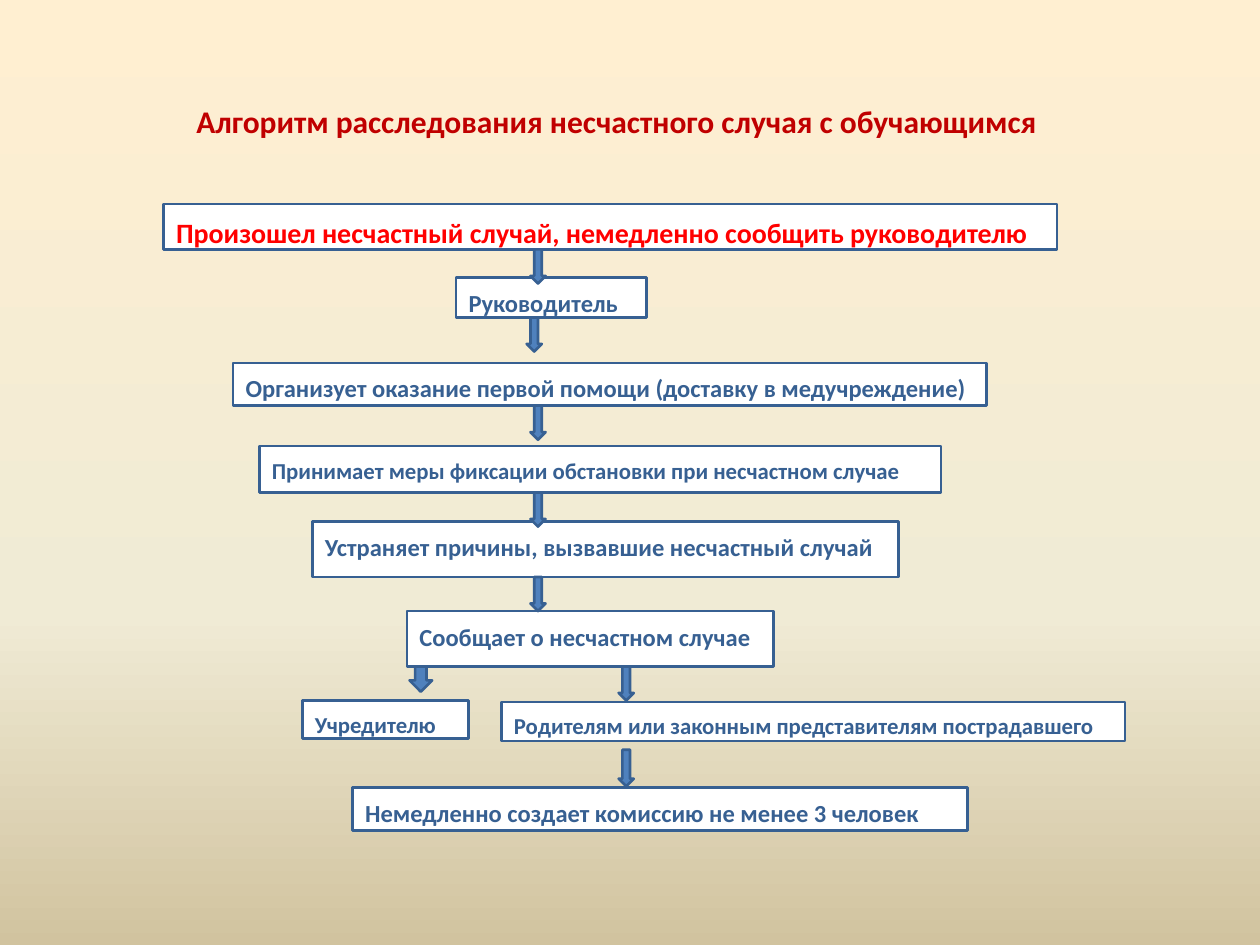
from collections import namedtuple
from copy import deepcopy

from pptx import Presentation
from pptx.dml.color import RGBColor
from pptx.enum.shapes import MSO_SHAPE as Shape
from pptx.enum.text import MSO_ANCHOR as Anchor, MSO_AUTO_SIZE as AutoSize, PP_ALIGN as Align
from pptx.oxml.ns import qn
from pptx.util import Inches, Pt

COLORS = {
    "sky": "FFEFD1", "sand": "F0EBD5", "earth": "D1C39F",
    "title": "C00000", "alert": "FF0000", "step": "376092",
    "box": "FFFFFF", "arrow": "4F81BD",
}
COLUMNS, ROWS = 100, 75
SLIDE_WIDTH, SLIDE_HEIGHT = Inches(10), Inches(7.5)
FONT = "Calibri"

Box = namedtuple("Box", "left top width height")
Step = namedtuple("Step", "box text size color", defaults=(14, "step"))
Arrow = namedtuple("Arrow", "step center width height gap", defaults=(1.2, 2.7, 0))

TITLE_BOX = Box(14.6, 7.6, 69.3, 4)
TITLE = "Алгоритм расследования несчастного случая с обучающимся"

STEPS = {
    "accident": Step(Box(13, 16.2, 70.9, 3.6),
                     "Произошел несчастный случай, немедленно сообщить руководителю", 16, "alert"),
    "head": Step(Box(36.2, 22, 15.1, 3.2), "Руководитель"),
    "first_aid": Step(Box(18.5, 28.8, 59.8, 3.4),
                      "Организует оказание первой помощи (доставку в медучреждение)"),
    "scene": Step(Box(20.6, 35.4, 54.1, 3.7),
                  "Принимает меры фиксации обстановки при несчастном случае", 13),
    "causes": Step(Box(24.8, 41.4, 46.5, 4.4), "Устраняет причины, вызвавшие несчастный случай"),
    "report": Step(Box(32.3, 48.5, 29.1, 4.4), "Сообщает о несчастном случае"),
    "founder": Step(Box(24, 55.6, 13.2, 3), "Учредителю", 13),
    "parents": Step(Box(39.8, 55.7, 49.5, 3.1),
                    "Родителям или законным представителям пострадавшего", 13),
    "commission": Step(Box(28, 62.5, 48.8, 3.4), "Немедленно создает комиссию не менее 3 человек"),
}
ARROWS = [
    Arrow("accident", 42.7), Arrow("head", 42.4), Arrow("first_aid", 42.7),
    Arrow("scene", 42.7), Arrow("causes", 42.7), Arrow("report", 49.7),
    Arrow("report", 33.4, 1.8, 2), Arrow("parents", 49.7, 1.2, 2.9, 0.7),
]


def rgb(name):
    return RGBColor.from_string(COLORS[name])


def place(box):
    column, row = SLIDE_WIDTH / COLUMNS, SLIDE_HEIGHT / ROWS
    return [round(length * unit) for length, unit in zip(box, (column, row) * 2)]


def paint_background(slide):
    fill = slide.background.fill
    fill.gradient()
    fill.gradient_angle = 270
    stop_list = slide.element.find(".//" + qn("a:gsLst"))
    stop_list.insert(1, deepcopy(stop_list[0]))
    for stop, position, name in zip(fill.gradient_stops, (0, 0.65, 1), ("sky", "sand", "earth")):
        stop.position = position
        stop.color.rgb = rgb(name)


def write_text(shape, text, size, color):
    frame = shape.text_frame
    frame.word_wrap = True
    frame.vertical_anchor = Anchor.TOP
    paragraph = frame.paragraphs[0]
    paragraph.text = text
    paragraph.alignment = Align.LEFT
    font = paragraph.font
    font.name, font.size, font.bold = FONT, Pt(size), True
    font.color.rgb = rgb(color)
    return paragraph


def add_outlined(slide, kind, box, fill):
    shape = slide.shapes.add_shape(kind, *place(box))
    shape.shadow.inherit = False
    shape.fill.solid()
    shape.fill.fore_color.rgb = rgb(fill)
    shape.line.color.rgb = rgb("step")
    shape.line.width = Pt(1.5)
    return shape


def add_title(slide, box):
    shape = slide.shapes.add_textbox(*place(box))
    write_text(shape, TITLE, 18, "title")
    shape.text_frame.auto_size = AutoSize.SHAPE_TO_FIT_TEXT


def add_step(slide, step):
    shape = add_outlined(slide, Shape.RECTANGLE, step.box, "box")
    paragraph = write_text(shape, step.text, step.size, step.color)
    paragraph.line_spacing = 1.15
    paragraph.space_after = Pt(10)


def add_arrow(slide, arrow, source):
    top = source.top + source.height + arrow.gap
    box = Box(arrow.center - arrow.width / 2, top, arrow.width, arrow.height)
    add_outlined(slide, Shape.DOWN_ARROW, box, "arrow")


def main():
    presentation = Presentation()
    presentation.slide_width, presentation.slide_height = SLIDE_WIDTH, SLIDE_HEIGHT
    slide = presentation.slides.add_slide(presentation.slide_layouts[6])
    paint_background(slide)
    add_title(slide, TITLE_BOX)
    for step in STEPS.values():
        add_step(slide, step)
    for arrow in ARROWS:
        add_arrow(slide, arrow, STEPS[arrow.step].box)
    presentation.save("out.pptx")


if __name__ == "__main__":
    main()
